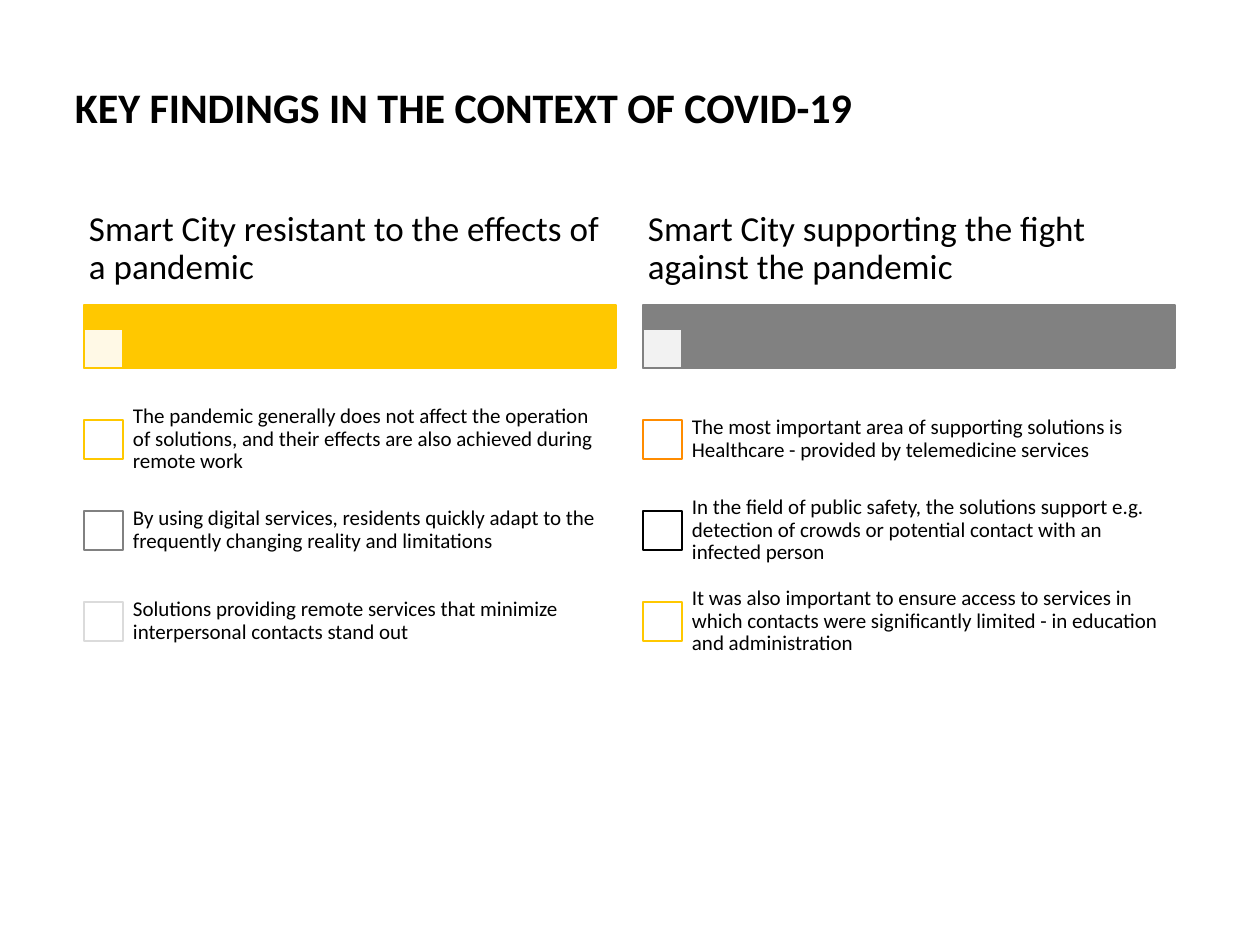
import pptx
import pptx.util
from pptx.dml.color import RGBColor
from pptx.enum.shapes import MSO_SHAPE
from pptx.enum.text import MSO_ANCHOR
from pptx.oxml.ns import qn
from lxml import etree

PX = 914400 // 126
COLORS = {
    "black": "000000", "white": "FFFFFF", "yellow": "FFC800",
    "gray": "818181", "light": "DBDBDB", "orange": "FF8C00",
}
COLUMNS = [
    (84, "yellow", "Smart City resistant to the effects of a pandemic", [
        ("yellow", "The pandemic generally does not affect the operation of solutions, "
                   "and their effects are also achieved during remote work"),
        ("gray", "By using digital services, residents quickly adapt to the "
                 "frequently changing reality and limitations"),
        ("light", "Solutions providing remote services that minimize "
                  "interpersonal contacts stand out"),
    ]),
    (643, "gray", "Smart City supporting the fight against the pandemic", [
        ("orange", "The most important area of supporting solutions is "
                   "Healthcare - provided by telemedicine services"),
        ("black", "In the field of public safety, the solutions support e.g. "
                  "detection of crowds or potential contact with an infected person"),
        ("yellow", "It was also important to ensure access to services in which contacts "
                   "were significantly limited - in education and administration"),
    ]),
]
COLUMN_W, BOX, TEXT_DX = 532, 39, 38
ROW_TOP, ROW_H = 394, 91


class Deck:
    font = "Calibri"

    def __init__(self, width, height):
        self.prs = pptx.Presentation()
        self.prs.slide_width = width * PX
        self.prs.slide_height = height * PX
        self.s = self.prs.slides.add_slide(self.prs.slide_layouts[6])

    def color(self, name):
        return RGBColor.from_string(COLORS[name])

    def rect(self, x, y, w, h, fill, line, opacity=100):
        sp = self.s.shapes.add_shape(MSO_SHAPE.RECTANGLE, x * PX, y * PX, w * PX, h * PX)
        sp.shadow.inherit = False
        sp.fill.solid()
        sp.fill.fore_color.rgb = self.color(fill)
        sp.line.color.rgb = self.color(line)
        sp.line.width = pptx.util.Pt(1)
        if opacity < 100:
            clr = sp.fill._xPr.find(qn("a:solidFill"))[0]
            etree.SubElement(clr, qn("a:alpha"), val=str(opacity * 1000))

    def text(self, x, y, w, h, text, size, inset, spacing=0.9,
             anchor=MSO_ANCHOR.MIDDLE, bold=False):
        """Add a text box; inset is (horizontal, vertical) in px."""
        tf = self.s.shapes.add_textbox(x * PX, y * PX, w * PX, h * PX).text_frame
        tf.word_wrap = True
        tf.vertical_anchor = anchor
        tf.margin_left = tf.margin_right = inset[0] * PX
        tf.margin_top = tf.margin_bottom = inset[1] * PX
        p = tf.paragraphs[0]
        p.text = text
        p.line_spacing = spacing
        r = p.runs[0]
        r.font.name = self.font
        r.font.size = pptx.util.Pt(size)
        r.font.bold = bold
        r.font.color.rgb = self.color("black")

    def column(self, x, accent, heading, findings):
        self.rect(x, 305, COLUMN_W, 63, accent, accent)
        self.rect(x, 329, BOX, BOX, "white", accent, opacity=90)
        self.text(x, 193, COLUMN_W, 112, heading, 20, (5, 4))
        for i, (outline, finding) in enumerate(findings):
            y = ROW_TOP + i * ROW_H
            self.rect(x, y + (ROW_H - BOX) // 2, BOX, BOX, "white", outline)
            self.text(x + TEXT_DX, y, COLUMN_W - TEXT_DX, ROW_H, finding, 12, (11, 11))


def main():
    deck = Deck(1260, 945)
    deck.text(62, 69, 1164, 64, "KEY FINDINGS IN THE CONTEXT OF COVID-19", 24, (13, 6),
              spacing=1.13, anchor=MSO_ANCHOR.TOP, bold=True)
    for column in COLUMNS:
        deck.column(*column)
    deck.prs.save("out.pptx")


if __name__ == "__main__":
    main()
